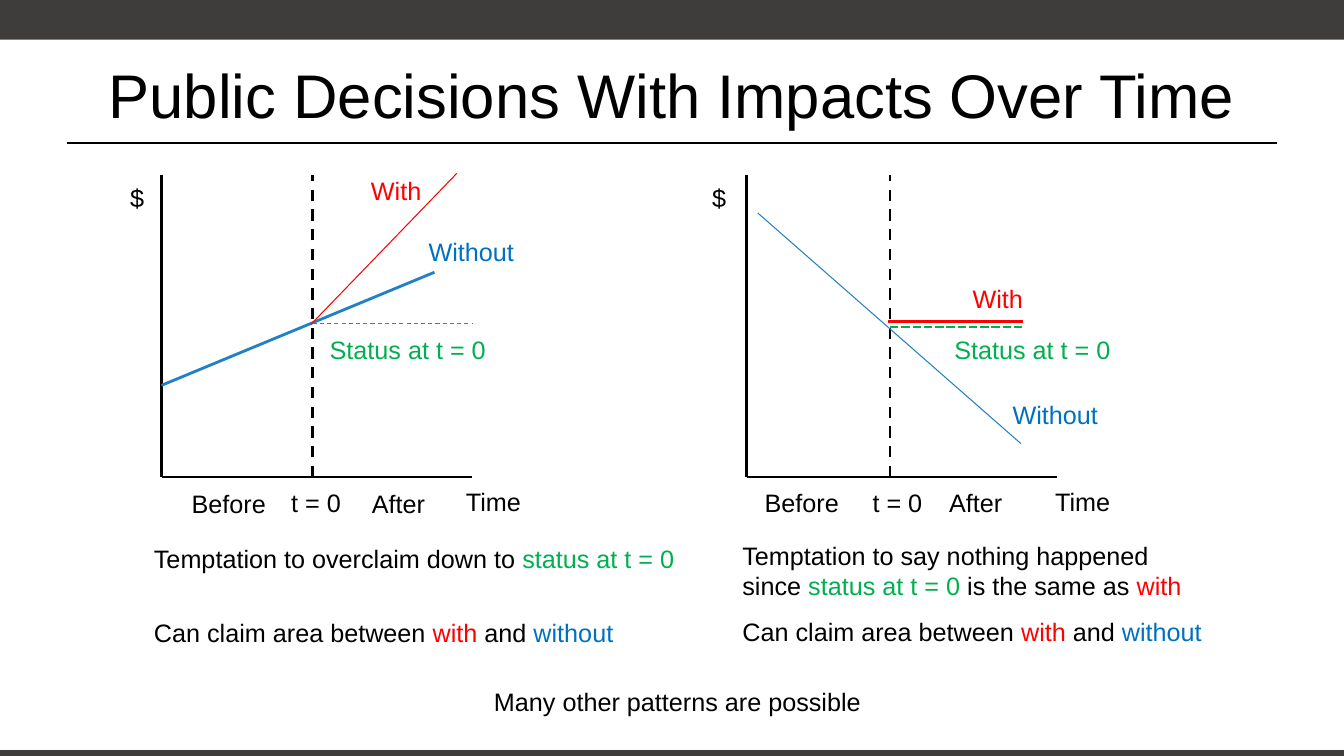
from dataclasses import dataclass

from lxml import etree
from pptx import Presentation
from pptx.dml.color import RGBColor
from pptx.enum.dml import MSO_LINE
from pptx.enum.shapes import MSO_CONNECTOR, MSO_SHAPE
from pptx.enum.text import MSO_ANCHOR, PP_ALIGN
from pptx.oxml.ns import qn
from pptx.util import Cm, Pt

STRAIGHT = MSO_CONNECTOR.STRAIGHT
RECTANGLE = MSO_SHAPE.RECTANGLE
DASH, SHORT_DASH = MSO_LINE.DASH, MSO_LINE.SQUARE_DOT
TOP, MIDDLE = MSO_ANCHOR.TOP, MSO_ANCHOR.MIDDLE
CENTER = PP_ALIGN.CENTER
TITLE_ONLY = 5
PAGE_WIDTH, PAGE_HEIGHT = 33.87, 19.05


@dataclass(frozen=True)
class Theme:
    font: str = "Arial"
    title_size: float = 44
    body_size: float = 18
    thick: float = 2
    medium: float = 1.25
    thin: float = 0.75
    ink: RGBColor = RGBColor(0, 0, 0)
    bar: RGBColor = RGBColor.from_string("3E3D3C")
    with_red: RGBColor = RGBColor.from_string("FF0000")
    without_blue: RGBColor = RGBColor.from_string("0070C0")
    line_blue: RGBColor = RGBColor.from_string("2181C6")
    status_green: RGBColor = RGBColor.from_string("00B050")


THEME = Theme()
INK, RED, BLUE, GREEN = THEME.ink, THEME.with_red, THEME.without_blue, THEME.status_green

# Plot size and label sizes in cm: width, height, anchor, colour
AXIS_WIDTH, AXIS_HEIGHT = 7.82, 7.62
LABELS = {
    "$": (0.9, 1.02, TOP, INK),
    "With": (1.95, 0.84, MIDDLE, RED),
    "Without": (2.9, 0.86, MIDDLE, BLUE),
    "Status at t = 0": (4.75, 0.91, MIDDLE, GREEN),
    "Before": (2.5, 1.02, TOP, INK),
    "t = 0": (1.9, 1.02, TOP, INK),
    "After": (1.95, 1.02, TOP, INK),
    "Time": (2.0, 1.02, TOP, INK),
}

# Each plot: place of t = 0, series lines and label corners, from the plot's top left
GROWTH = {
    "zero": 3.81,
    "series": [
        ((0, 5.31), (6.88, 2.46), THEME.line_blue, THEME.thick, None),
        ((7.44, -0.03), (3.76, 3.78), RED, THEME.thin, None),
        ((3.81, 3.76), (AXIS_WIDTH, 3.76), GREEN, THEME.thin, DASH),
    ],
    "labels": {
        "$": (-1.04, 0.08), "With": (5.03, -0.03), "Without": (6.48, 1.5),
        "Status at t = 0": (3.99, 3.96), "Before": (0.51, 7.77),
        "t = 0": (3.02, 7.75), "After": (5.05, 7.77), "Time": (7.42, 7.72),
    },
}
DECLINE = {
    "zero": 3.61,
    "series": [
        ((0.28, 0.97), (6.91, 6.78), THEME.line_blue, THEME.thin, None),
        ((3.56, 3.71), (6.96, 3.71), RED, THEME.thick, None),
        ((3.61, 3.84), (6.99, 3.84), GREEN, THEME.thick, SHORT_DASH),
    ],
    "labels": {
        "$": (-1.12, 0.08), "With": (5.44, 2.69), "Without": (6.45, 5.61),
        "Status at t = 0": (4.98, 3.96), "Before": (0.2, 7.75),
        "t = 0": (2.92, 7.75), "After": (4.85, 7.75), "Time": (7.52, 7.72),
    },
}

CLAIM = [("Can claim area between ", INK), ("with", RED), (" and ", INK), ("without", BLUE)]
OVERCLAIM = [("Temptation to overclaim down to ", INK), ("status at t = 0", GREEN)]
NOTHING = [("Temptation to say nothing happened since ", INK), ("status at t = 0 ", GREEN),
           ("is the same as ", INK), ("with", RED)]


def add_line(page, start, end, color, weight, dash=None):
    line = page.shapes.add_connector(
        STRAIGHT, Cm(start[0]), Cm(start[1]), Cm(end[0]), Cm(end[1]))
    line.line.color.rgb = color
    line.line.width = Pt(weight)
    if dash is not None:
        line.line.dash_style = dash
    etree.SubElement(line.element.spPr, qn("a:effectLst"))


def add_text(page, box, spans, wrap=False, anchor=TOP):
    shape = page.shapes.add_textbox(*(Cm(length) for length in box))
    frame = shape.text_frame
    frame.word_wrap = wrap
    frame.vertical_anchor = anchor
    para = frame.paragraphs[0]
    para.font.name = THEME.font
    para.font.size = Pt(THEME.body_size)
    for words, color in spans:
        span = para.add_run()
        span.text = words
        span.font.color.rgb = color


def add_bar(page, top, height):
    bar = page.shapes.add_shape(RECTANGLE, 0, Cm(top), Cm(PAGE_WIDTH), Cm(height))
    bar.shadow.inherit = False
    bar.fill.solid()
    bar.fill.fore_color.rgb = THEME.bar
    bar.line.fill.background()


def add_header(page, left, top, width, height):
    title = page.shapes.title
    title.left, title.top, title.width, title.height = Cm(left), Cm(top), Cm(width), Cm(height)
    title.text_frame.text = "Public Decisions With Impacts Over Time"
    title.text_frame.vertical_anchor = MIDDLE
    para = title.text_frame.paragraphs[0]
    para.alignment = CENTER
    para.font.name = THEME.font
    para.font.size = Pt(THEME.title_size)
    para.font.color.rgb = INK
    rule_y = top + height - 0.35
    add_line(page, (left, rule_y), (left + width, rule_y), INK, THEME.medium)


def add_plot(page, left, top, plot):
    def place(point):
        return left + point[0], top + point[1]

    # Axes and the t = 0 divider
    corner = place((0, AXIS_HEIGHT))
    add_line(page, place((0, 0)), corner, INK, THEME.thick)
    add_line(page, corner, place((AXIS_WIDTH, AXIS_HEIGHT)), INK, THEME.thick)
    zero = plot["zero"]
    add_line(page, place((zero, AXIS_HEIGHT)), place((zero, 0)), INK, THEME.thick, DASH)
    # Series and labels
    for start, end, color, weight, dash in plot["series"]:
        add_line(page, place(start), place(end), color, weight, dash)
    for words, point in plot["labels"].items():
        width, height, anchor, color = LABELS[words]
        add_text(page, (*place(point), width, height), [(words, color)], anchor=anchor)


def add_remarks(page, left, top, width, temptation, claim_gap):
    add_text(page, (left, top, width, 1.0), temptation, wrap=True)
    add_text(page, (left, top + claim_gap, 12.1, 1.02), CLAIM, wrap=True)


def main():
    deck = Presentation()
    deck.slide_width, deck.slide_height = Cm(PAGE_WIDTH), Cm(PAGE_HEIGHT)
    page = deck.slides.add_slide(deck.slide_layouts[TITLE_ONLY])

    # Frame and title
    add_bar(page, 0, 1.0)
    add_bar(page, 18.9, 0.15)
    add_header(page, 1.7, 0.79, 30.48, 3.17)

    # Plots
    add_plot(page, 4.07, 4.4, GROWTH)
    add_plot(page, 18.82, 4.4, DECLINE)

    # Remarks
    add_remarks(page, 3.63, 13.56, 13.77, OVERCLAIM, 1.86)
    add_remarks(page, 18.46, 13.49, 11.84, NOTHING, 1.91)
    add_text(page, (12.2, 17.17, 9.98, 1.02), [("Many other patterns are possible", INK)])

    deck.save("out.pptx")


if __name__ == "__main__":
    main()
